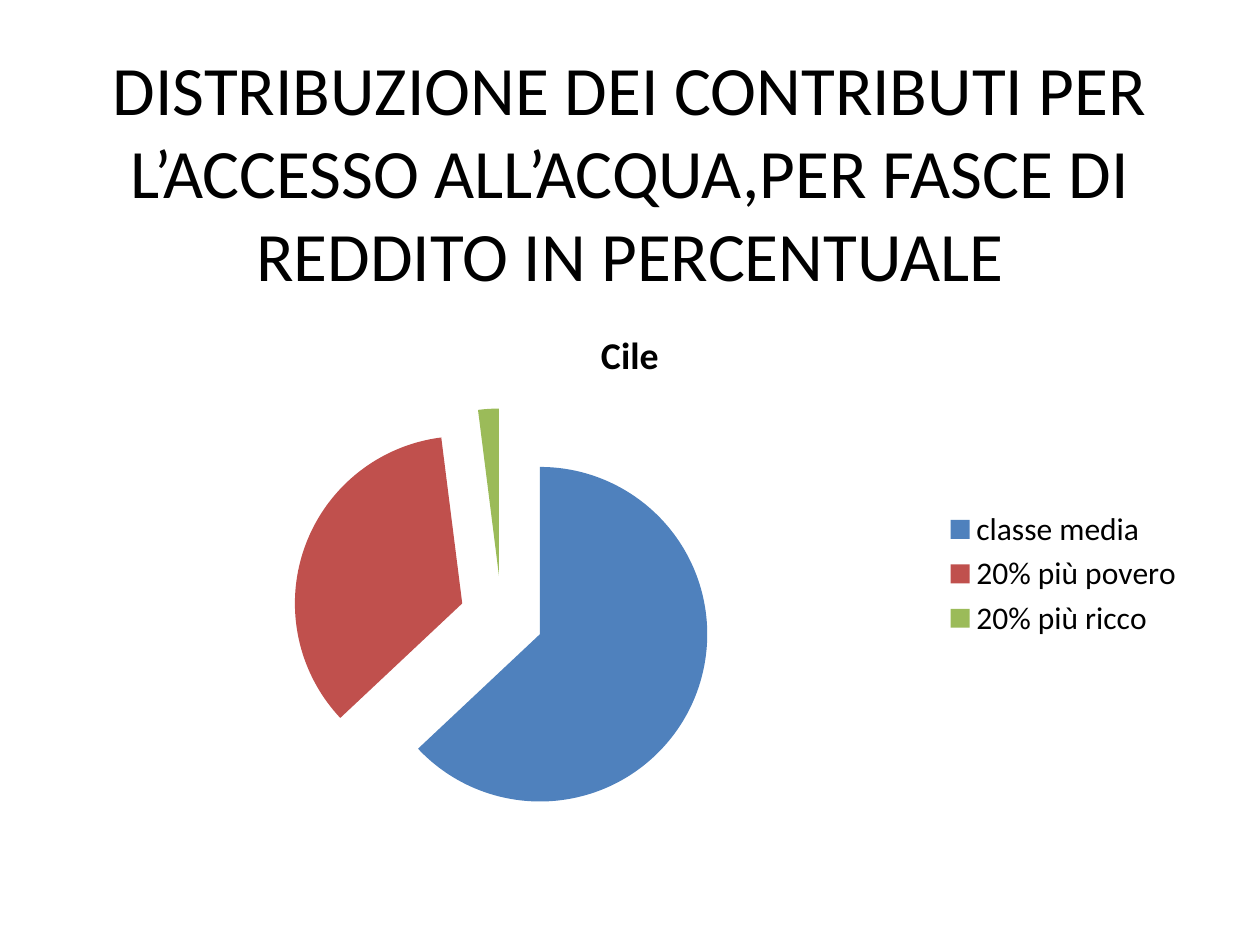
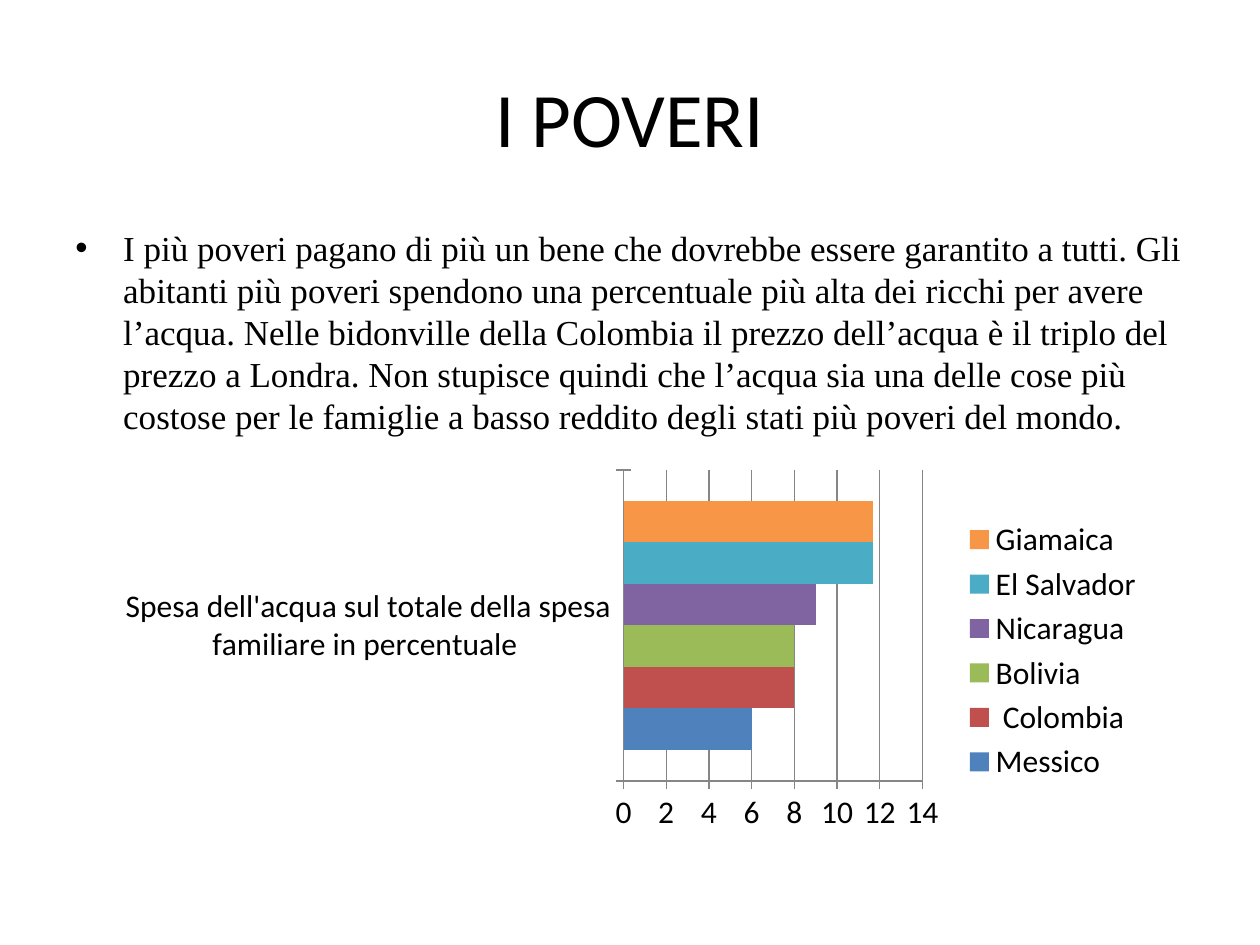
from lxml import etree
from pptx import Presentation
from pptx import util as u
from pptx.chart.data import CategoryChartData
from pptx.dml.color import RGBColor
from pptx.enum import chart as ch, text
from pptx.oxml.ns import qn

COLORS = {
    "ink": "000000", "axis": "868686",
    "blue": "4F81BD", "red": "C0504D", "green": "9BBB59",
    "purple": "8064A2", "aqua": "4BACC6", "orange": "F79646",
}
RGB = {name: RGBColor.from_string(value) for name, value in COLORS.items()}
FONT, BODY_FONT = "Calibri", "Times New Roman"


def add_text(s, words, top, height, size, font, anchor):
    """Add a full-width text box and return its paragraph."""
    sp = s.shapes.add_textbox(u.Inches(0.5), u.Inches(top), u.Inches(9), u.Inches(height))
    tf = sp.text_frame
    tf.word_wrap = True
    tf.vertical_anchor = anchor
    p = tf.paragraphs[0]
    r = p.add_run()
    r.text = words
    r.font.size = u.Pt(size)
    r.font.name = font
    r.font.color.rgb = RGB["ink"]
    return p


def add_styled_chart(s, kind, box, data):
    """Add a chart with the shared font and a legend on the right."""
    chart = s.shapes.add_chart(kind, *[u.Inches(v) for v in box], data).chart
    chart.font.size = u.Pt(18)
    chart.font.name = FONT
    chart.font.color.rgb = RGB["ink"]
    chart.has_legend = True
    chart.legend.position = ch.XL_LEGEND_POSITION.RIGHT
    chart.legend.include_in_layout = False
    return chart


prs = Presentation()
prs.slide_width, prs.slide_height = u.Inches(10), u.Inches(7.5)
blank = prs.slide_layouts[6]

# Slide 1: contributions by income band
s = prs.slides.add_slide(blank)
p = add_text(s, "DISTRIBUZIONE DEI CONTRIBUTI PER L’ACCESSO ALL’ACQUA,PER FASCE DI "
             "REDDITO IN PERCENTUALE", 0.3, 2.11, 39.6, FONT, text.MSO_ANCHOR.MIDDLE)
p.alignment = text.PP_ALIGN.CENTER

bands = [("classe media", 63, "blue"), ("20% più povero", 35, "red"), ("20% più ricco", 2, "green")]
data = CategoryChartData()
data.categories = [band for band, _, _ in bands]
data.add_series("Cile", [share for _, share, _ in bands])
pie = add_styled_chart(s, ch.XL_CHART_TYPE.PIE, (0.5, 2.41, 9, 4.29), data)
pie.has_title = True
r = pie.chart_title.text_frame.paragraphs[0].add_run()
r.text = "Cile"
r.font.size = u.Pt(21.6)
r.font.bold = True
r.font.name = FONT
r.font.color.rgb = RGB["ink"]

pie.plots[0].vary_by_categories = True
income = pie.plots[0].series[0]
for i, (_, _, color) in enumerate(bands):
    fill = income.points[i].format.fill
    fill.solid()
    fill.fore_color.rgb = RGB[color]
explosion = etree.Element(qn("c:explosion"), val="25")
income._element.find(qn("c:dPt")).addprevious(explosion)

# Slide 2: household spending on water
s = prs.slides.add_slide(blank)
p = add_text(s, "I POVERI", 0.3, 1.25, 44, FONT, text.MSO_ANCHOR.MIDDLE)
p.alignment = text.PP_ALIGN.CENTER

p = add_text(s, "I più poveri pagano di più un bene che dovrebbe essere garantito a tutti. "
             "Gli abitanti più poveri spendono una percentuale più alta dei ricchi per avere "
             "l’acqua. Nelle bidonville della Colombia il prezzo dell’acqua è il triplo del "
             "prezzo a Londra. Non stupisce quindi che l’acqua sia una delle cose più costose "
             "per le famiglie a basso reddito degli stati più poveri del mondo.",
             1.75, 4.95, 20, BODY_FONT, text.MSO_ANCHOR.TOP)
pPr = p._p.get_or_add_pPr()
pPr.set("marL", str(u.Inches(0.38)))
pPr.set("indent", str(u.Inches(-0.38)))
etree.SubElement(pPr, qn("a:buFont"), typeface="Arial")
etree.SubElement(pPr, qn("a:buChar"), char="•")

countries = [
    ("Messico", 6, "blue"), (" Colombia", 8, "red"), ("Bolivia", 8, "green"),
    ("Nicaragua", 9, "purple"), ("El Salvador", 11.7, "aqua"), ("Giamaica", 11.7, "orange"),
]
data = CategoryChartData()
data.categories = ["Spesa dell'acqua sul totale della spesa familiare in percentuale "]
for country, share, _ in countries:
    data.add_series(country, [share])
bars = add_styled_chart(s, ch.XL_CHART_TYPE.BAR_CLUSTERED, (0.83, 3.67, 8.35, 2.99), data)
bars.has_title = False
plot = bars.plots[0]
plot.vary_by_categories = False
plot.gap_width = 150
for series, (_, _, color) in zip(plot.series, countries):
    series.format.fill.solid()
    series.format.fill.fore_color.rgb = RGB[color]

for axis in (bars.category_axis, bars.value_axis):
    axis.major_tick_mark = ch.XL_TICK_MARK.CROSS
    axis.minor_tick_mark = ch.XL_TICK_MARK.NONE
    axis.format.line.color.rgb = RGB["axis"]
bars.category_axis.has_major_gridlines = False
bars.value_axis.has_major_gridlines = True
bars.value_axis.major_gridlines.format.line.color.rgb = RGB["axis"]

prs.save("out.pptx")
